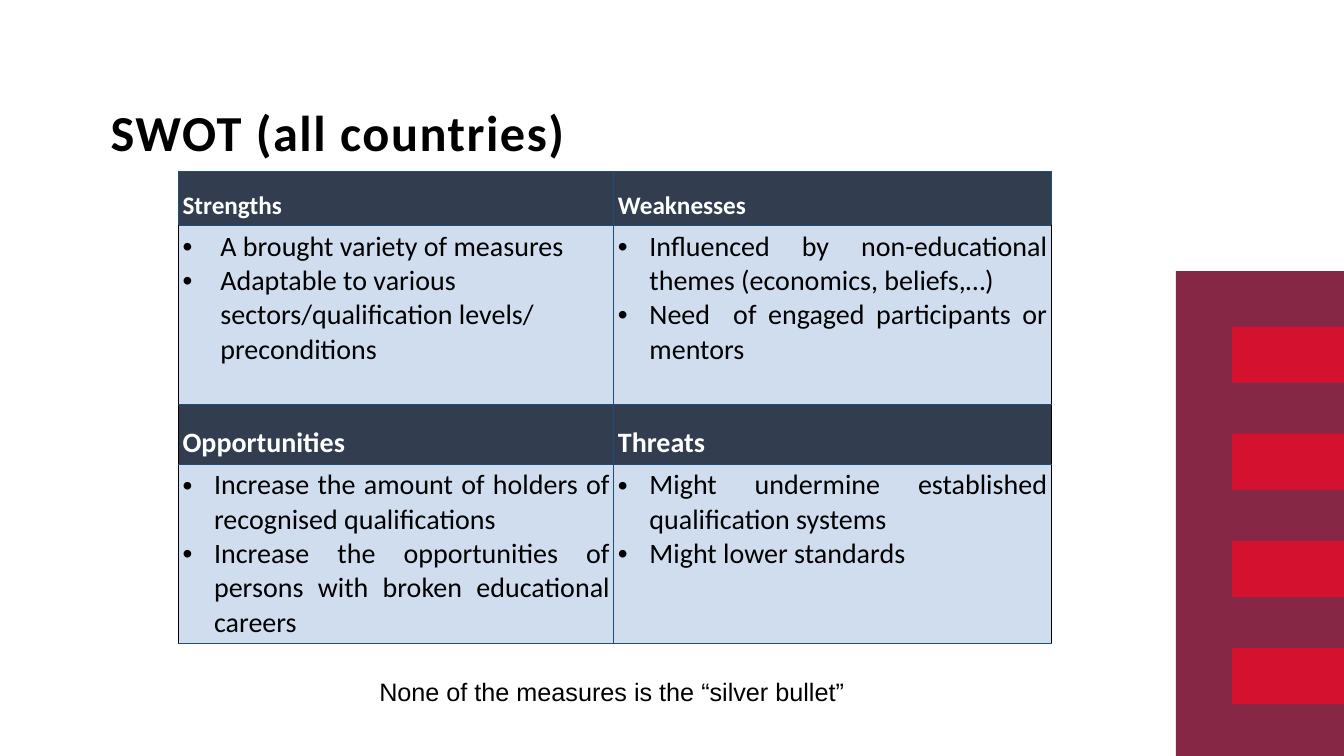
"""Build the SWOT slide for all countries."""
import pptx
import pptx.util
import pptx.dml.color
import pptx.enum.shapes
import pptx.enum.text
import pptx.oxml
import pptx.oxml.ns

Pt = pptx.util.Pt
ALIGN = pptx.enum.text.PP_ALIGN
NAVY, PALE, BORDER = "323E4F", "D0DDEF", "1F4E79"
NS = pptx.oxml.ns.nsdecls("a")


def color(value):
    return pptx.dml.color.RGBColor.from_string(value)


def add_text(paragraph, text, size, hue, bold=False, font="Calibri"):
    run = paragraph.add_run()
    run.text = text
    run.font.size = Pt(size)
    run.font.name = font
    run.font.bold = bold
    run.font.color.rgb = color(hue)
    return run


deck = pptx.Presentation()
deck.slide_width, deck.slide_height = Pt(960), Pt(540)
slide = deck.slides.add_slide(deck.slide_layouts[5])

panel = (840, 193.7, 120, 346.3, "872746")
stripes = [(880, 233.3 + 76.5 * i, 80, 40, "D51130") for i in range(4)]
for left, top, width, height, hue in [panel, *stripes]:
    band = slide.shapes.add_shape(pptx.enum.shapes.MSO_SHAPE.RECTANGLE,
                                  Pt(left), Pt(top), Pt(width), Pt(height))
    band.shadow.inherit = False
    band.fill.solid()
    band.fill.fore_color.rgb = color(hue)
    band.line.fill.background()

heading = slide.shapes.title
heading.left, heading.top, heading.width, heading.height = Pt(79), Pt(77), Pt(720), Pt(45)
frame = heading.text_frame
frame.margin_left = frame.margin_right = frame.margin_top = frame.margin_bottom = 0
frame.vertical_anchor = pptx.enum.text.MSO_ANCHOR.TOP
frame.word_wrap = True
frame.auto_size = pptx.enum.text.MSO_AUTO_SIZE.NONE
frame.paragraphs[0].alignment = ALIGN.LEFT
frame.paragraphs[0].line_spacing = 0.9
heading_run = add_text(frame.paragraphs[0], "SWOT (all countries)", 36, "000000", True)
heading_run.font._element.set("spc", "110")

swot = [
    [["Strengths"], ["Weaknesses"]],
    [["A brought variety of measures",
      "Adaptable to various sectors/qualification levels/ preconditions"],
     ["Influenced by non-educational themes (economics, beliefs,…)",
      "Need  of engaged participants or mentors"]],
    [["Opportunities"], ["Threats"]],
    [["Increase the amount of holders of recognised qualifications",
      "Increase the opportunities of persons with broken educational careers"],
     ["Might undermine established qualification systems",
      "Might lower standards"]],
]
row_heights = [38.7, 128, 42.5, 128]
column_widths = [311, 312.5]
matrix = slide.shapes.add_table(4, 2, Pt(127.5), Pt(122.3), Pt(sum(column_widths)),
                                Pt(sum(row_heights))).table
for column, width in zip(matrix.columns, column_widths):
    column.width = Pt(width)

for r, quadrants in enumerate(swot):
    matrix.rows[r].height = Pt(row_heights[r])
    is_header = r % 2 == 0
    for c, points in enumerate(quadrants):
        cell = matrix.cell(r, c)
        cell.margin_left = cell.margin_right = Pt(2.9)
        cell.margin_top = cell.margin_bottom = Pt(2.9)
        outer_side = "lnL" if c == 0 else "lnR"
        for side in ("lnL", "lnR", "lnT", "lnB"):
            hue = "000000" if r > 0 and side == outer_side else BORDER
            cell._tc.get_or_add_tcPr().append(pptx.oxml.parse_xml(
                f'<a:{side} {NS} w="12700"><a:solidFill><a:srgbClr val="{hue}"/>'
                f'</a:solidFill></a:{side}>'))
        cell.fill.solid()
        cell.fill.fore_color.rgb = color(NAVY if is_header else PALE)
        for i, point in enumerate(points):
            entry = cell.text_frame.paragraphs[0] if i == 0 else cell.text_frame.add_paragraph()
            is_strength = (r, c) == (1, 0)
            entry.alignment = ALIGN.LEFT if is_strength else ALIGN.JUSTIFY
            if is_header:
                entry.line_spacing = 1.5
                entry.space_after = Pt(8)
                add_text(entry, point, 18 if r == 0 else 20, "FFFFFF", True)
            else:
                indent = Pt(27 if is_strength else 22.5)
                properties = entry._p.get_or_add_pPr()
                properties.set("marL", str(indent))
                properties.set("indent", str(-indent))
                properties.append(pptx.oxml.parse_xml(f'<a:buFont {NS} typeface="Arial"/>'))
                properties.append(pptx.oxml.parse_xml(f'<a:buChar {NS} char="•"/>'))
                add_text(entry, point, 20, "000000")

conclusion = slide.shapes.add_textbox(Pt(199.5), Pt(479.5), Pt(480), Pt(29)).text_frame
conclusion.word_wrap = True
conclusion.paragraphs[0].alignment = ALIGN.CENTER
add_text(conclusion.paragraphs[0], "None of the measures is the “silver bullet” ",
         18, "000000", font="Arial")

deck.save("out.pptx")
